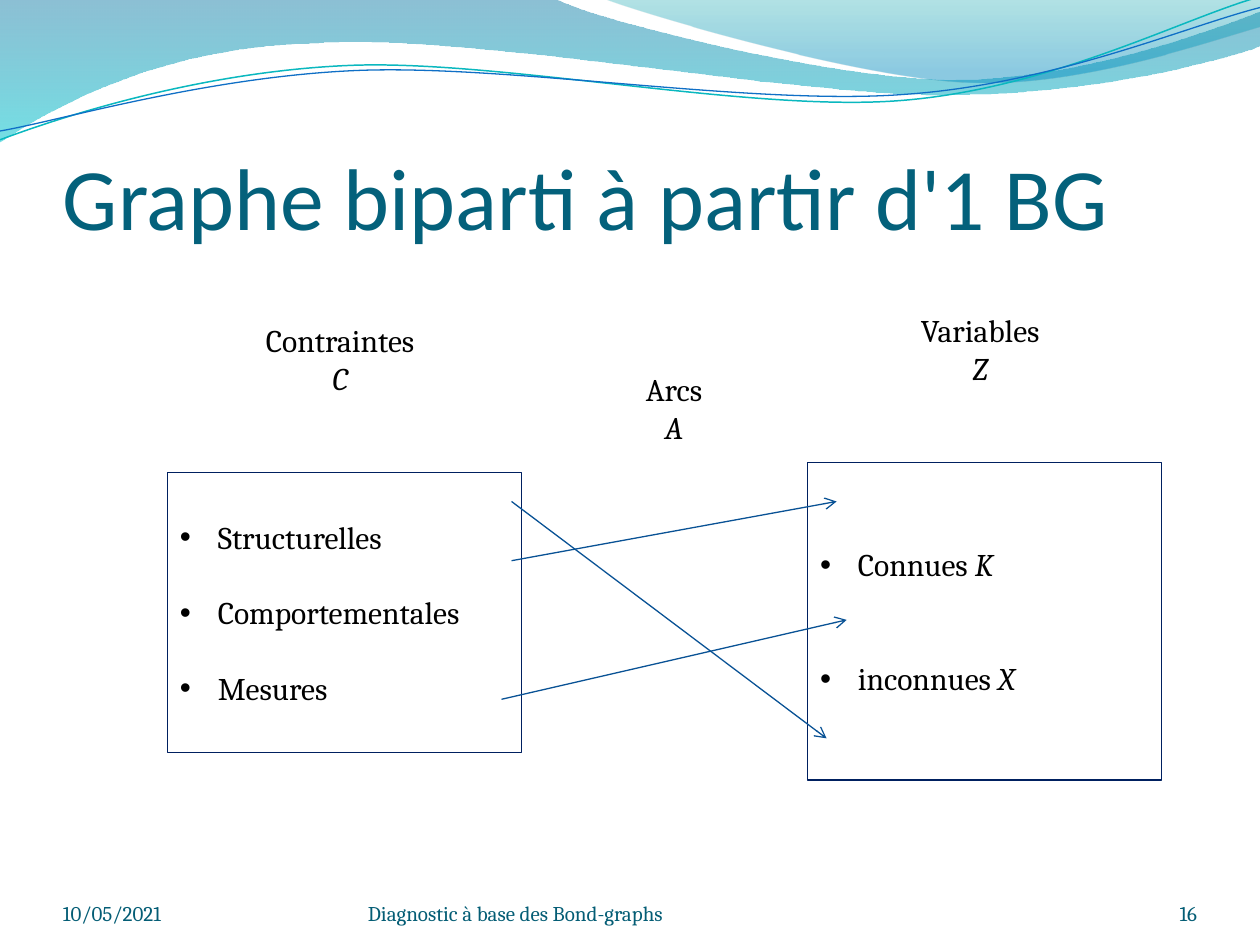
import pptx
import pptx.util
import pptx.dml.color
import pptx.enum.shapes
import pptx.enum.text
import pptx.oxml.ns
import lxml.etree

Inches, Pt = pptx.util.Inches, pptx.util.Pt
ALIGN, ANCHOR = pptx.enum.text.PP_ALIGN, pptx.enum.text.MSO_ANCHOR
qn = pptx.oxml.ns.qn

COLORS = {
    "title": "04617B", "footer": "045D75", "text": "000000",
    "box": "002060", "arc": "095295",
    "teal line": "0AB8BF", "blue line": "0F6FC6",
    "deep blue": "0074A1", "cyan": "00C6CF",
    "teal": "00A1A9", "azure": "008BBF",
}

# Each segment is one point (straight) or three points (Bezier curve).
WAVE = [
    [(4.4, -0.01)],
    [(4.76, 0.17), (6.64, 0.63), (7.58, 0.63)],
    [(8.53, 0.63), (9.58, 0.26), (10, 0.09)],
    [(10.01, 0.36)],
    [(9.83, 0.44), (8.7, 0.76), (7.46, 0.75)],
    [(6.22, 0.75), (3.82, 0.28), (2.57, 0.34)],
    [(1.29, 0.36), (0.46, 0.83), (-0.01, 1.13)],
    [(0, 0)],
]
CREST = [
    [(5.09, 0.11), (6.82, 0.62), (7.69, 0.65)],
    [(8.56, 0.69), (9.61, 0.32), (10, 0.21)],
    [(10, 0)],
    [(4.79, -0.01)],
]
TEAL_LINE = [
    [(0.48, 0.93), (1.58, 0.57), (2.77, 0.52)],
    [(3.95, 0.47), (5.93, 0.89), (7.13, 0.8)],
    [(8.33, 0.71), (9.38, 0.15), (9.98, -0.02)],
]
BLUE_LINE = [
    [(0.47, 0.96), (1.64, 0.61), (2.83, 0.56)],
    [(4.03, 0.51), (5.97, 0.84), (7.17, 0.75)],
    [(8.36, 0.67), (9.41, 0.21), (10, 0.06)],
]


def rgb(name):
    return pptx.dml.color.RGBColor.from_string(COLORS[name])


def add_curve(slide, start, segments, closed):
    """Build a freeform, then turn each three-point segment into a Bezier."""
    builder = slide.shapes.build_freeform(Inches(start[0]), Inches(start[1]))
    points = [(Inches(x), Inches(y)) for segment in segments for x, y in segment]
    builder.add_line_segments(points, close=closed)
    curve = builder.convert_to_shape()
    curve.shadow.inherit = False
    steps = iter(list(curve.element.iter(qn("a:lnTo"))))
    for segment in segments:
        first, *others = [next(steps) for _ in segment]
        if others:
            first.tag = qn("a:cubicBezTo")
            for step in others:
                first.append(step[0])
                step.getparent().remove(step)
    return curve


def add_wave(slide, start, segments, stops):
    """Stops are (position, color name, opacity in percent), top to bottom."""
    wave = add_curve(slide, start, segments, True)
    wave.line.fill.background()
    wave.fill.gradient()
    wave.fill.gradient_angle = 270
    gradient_stops = wave.fill.gradient_stops
    for stop, (position, color, _) in zip(gradient_stops, stops):
        stop.position = position
        stop.color.rgb = rgb(color)
    for element, (_, _, opacity) in zip(wave.element.iter(qn("a:gs")), stops):
        lxml.etree.SubElement(element[0], qn("a:alpha"), val=str(opacity * 1000))


def add_wave_line(slide, start, segments, color, width):
    line = add_curve(slide, start, segments, False)
    line.fill.background()
    line.line.color.rgb = rgb(color)
    line.line.width = Pt(width)


def add_run(paragraph, text, size=18, font="Cambria", color="text", italic=False):
    run = paragraph.add_run()
    run.text = text
    run.font.size = Pt(size)
    run.font.name = font
    run.font.italic = italic
    run.font.color.rgb = rgb(color)


def add_text(slide, box, text, size, font, color, align=ALIGN.LEFT, bottom=0):
    """Bottom-anchored single line without side margins."""
    frame = slide.shapes.add_textbox(*map(Inches, box)).text_frame
    frame.word_wrap = True
    frame.vertical_anchor = ANCHOR.BOTTOM
    frame.margin_left = frame.margin_right = frame.margin_top = 0
    frame.margin_bottom = Inches(bottom)
    paragraph = frame.paragraphs[0]
    paragraph.alignment = align
    add_run(paragraph, text, size, font, color)


def add_heading(slide, left, top, label, symbol):
    box = map(Inches, (left, top, 1.8, 0.71))
    frame = slide.shapes.add_textbox(*box).text_frame
    frame.word_wrap = True
    for paragraph, text, italic in (
        (frame.paragraphs[0], label, False),
        (frame.add_paragraph(), symbol, True),
    ):
        paragraph.alignment = ALIGN.CENTER
        add_run(paragraph, text, italic=italic)


def add_set(slide, box, items, gap):
    """Outlined box of bullets; each item is (text, italic symbol)."""
    rectangle = slide.shapes.add_shape(
        pptx.enum.shapes.MSO_SHAPE.RECTANGLE, *map(Inches, box))
    rectangle.shadow.inherit = False
    rectangle.fill.background()
    rectangle.line.color.rgb = rgb("box")
    rectangle.line.width = Pt(0.75)
    frame = rectangle.text_frame
    frame.word_wrap = True
    frame.vertical_anchor = ANCHOR.MIDDLE
    for index, (text, symbol) in enumerate(items):
        paragraph = frame.add_paragraph() if index else frame.paragraphs[0]
        paragraph.alignment = ALIGN.LEFT
        if index:
            paragraph.space_before = Pt(gap)
        properties = paragraph._p.get_or_add_pPr()
        properties.set("marL", str(Inches(0.3)))
        properties.set("indent", str(-Inches(0.3)))
        lxml.etree.SubElement(properties, qn("a:buFont"), typeface="Arial")
        lxml.etree.SubElement(properties, qn("a:buChar"), char="•")
        add_run(paragraph, text)
        if symbol:
            add_run(paragraph, symbol, italic=True)


def add_arc(slide, start, end):
    arc = slide.shapes.add_connector(
        pptx.enum.shapes.MSO_CONNECTOR.STRAIGHT, *map(Inches, start + end))
    arc.line.color.rgb = rgb("arc")
    arc.line.width = Pt(0.75)
    lxml.etree.SubElement(arc.line._get_or_add_ln(), qn("a:tailEnd"), type="arrow")
    lxml.etree.SubElement(arc.element.spPr, qn("a:effectLst"))


def main():
    deck = pptx.Presentation()
    deck.slide_width, deck.slide_height = Inches(10), Inches(7.5)
    slide = deck.slides.add_slide(deck.slide_layouts[6])

    add_wave(slide, (0, 0), WAVE, [(0, "deep blue", 45), (1, "cyan", 55)])
    add_wave(slide, (4.79, -0.01), CREST, [(0, "teal", 30), (0.8, "azure", 45)])
    add_wave_line(slide, (0, 1.11), TEAL_LINE, "teal line", 0.85)
    add_wave_line(slide, (0, 1.04), BLUE_LINE, "blue line", 0.75)

    add_text(slide, (0.5, 0.77, 9, 1.25), "Graphe biparti à partir d'1 BG",
             50, "Calibri", "title", bottom=0.05)
    for left, width, text, align in (
        (0.5, 2.33, "10/05/2021", ALIGN.LEFT),
        (2.92, 3.67, "Diagnostic à base des Bond-graphs", ALIGN.LEFT),
        (8.67, 0.83, "16", ALIGN.RIGHT),
    ):
        add_text(slide, (left, 6.95, width, 0.4), text, 12, "Cambria", "footer", align)

    add_heading(slide, 1.8, 2.5, "Contraintes", "C")
    add_set(slide, (1.33, 3.75, 2.81, 2.22),
            [("Structurelles", ""), ("Comportementales", ""), ("Mesures", "")], 21.6)
    add_heading(slide, 6.88, 2.42, "Variables", "Z")
    add_set(slide, (6.41, 3.67, 2.81, 2.52),
            [("Connues ", "K"), ("inconnues ", "X")], 43.5)
    add_heading(slide, 4.45, 2.89, "Arcs", "A")

    add_arc(slide, (4.06, 4.45), (6.64, 3.98))
    add_arc(slide, (4.06, 3.98), (6.56, 5.86))
    add_arc(slide, (3.98, 5.55), (6.72, 4.92))
    deck.save("out.pptx")


if __name__ == "__main__":
    main()
